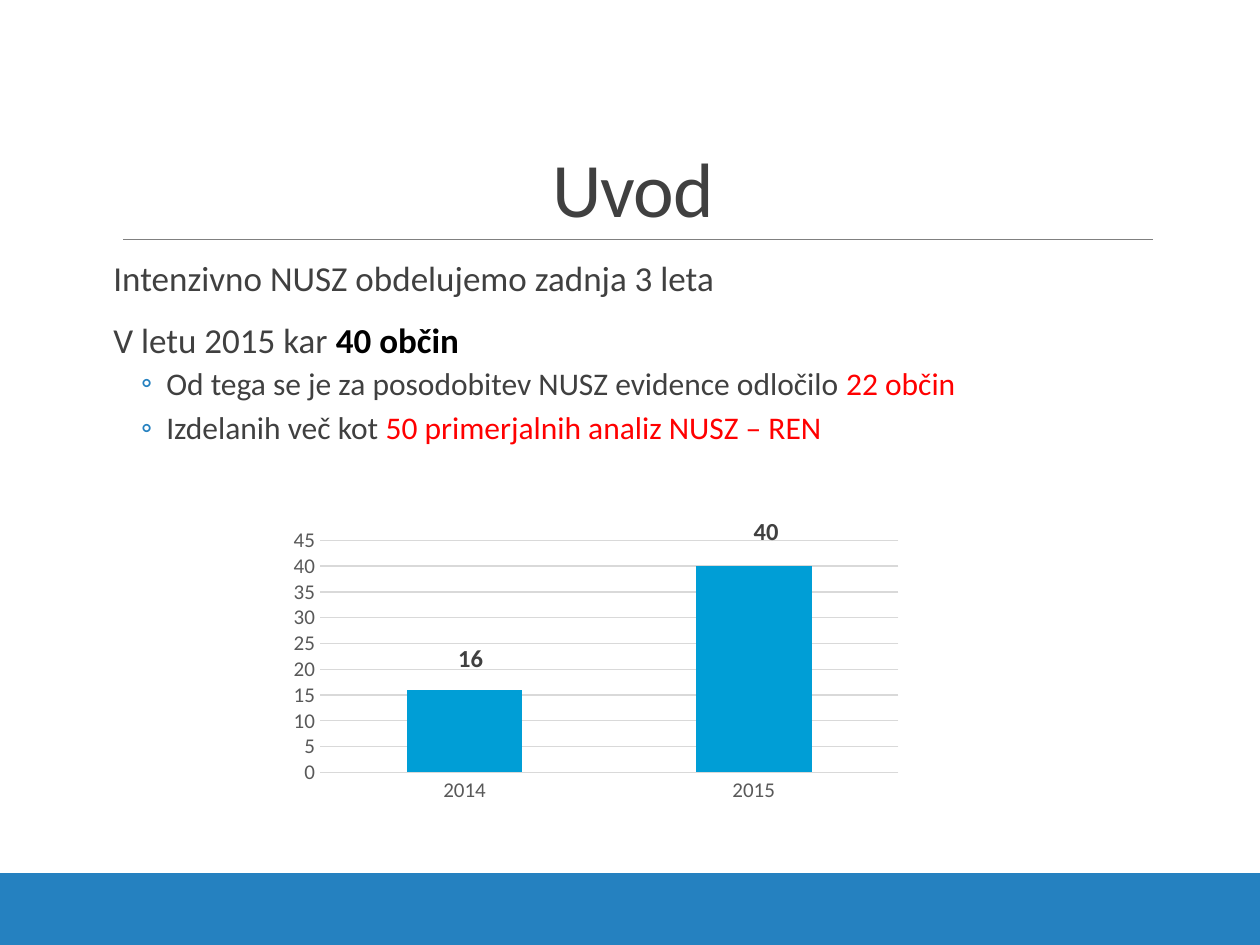
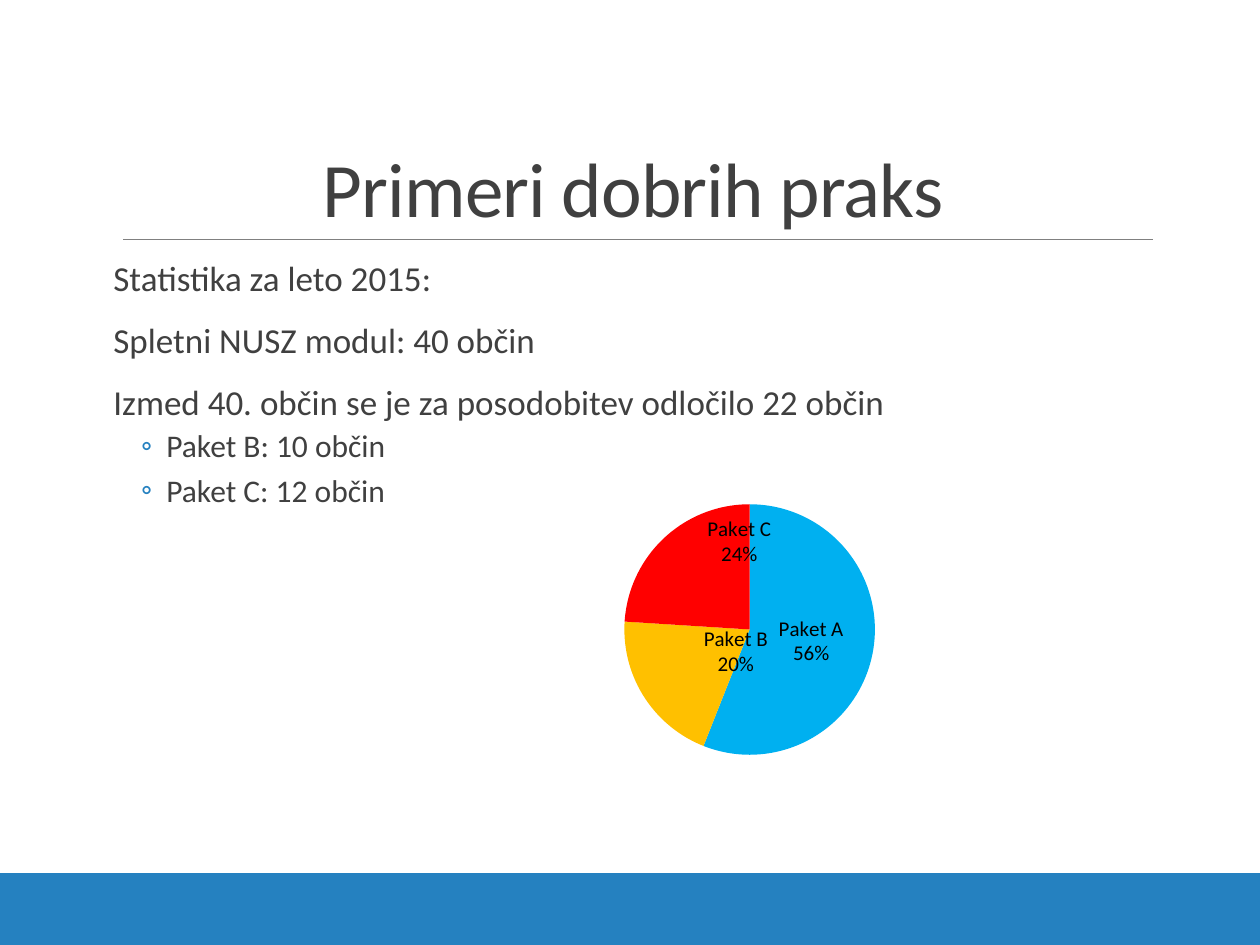
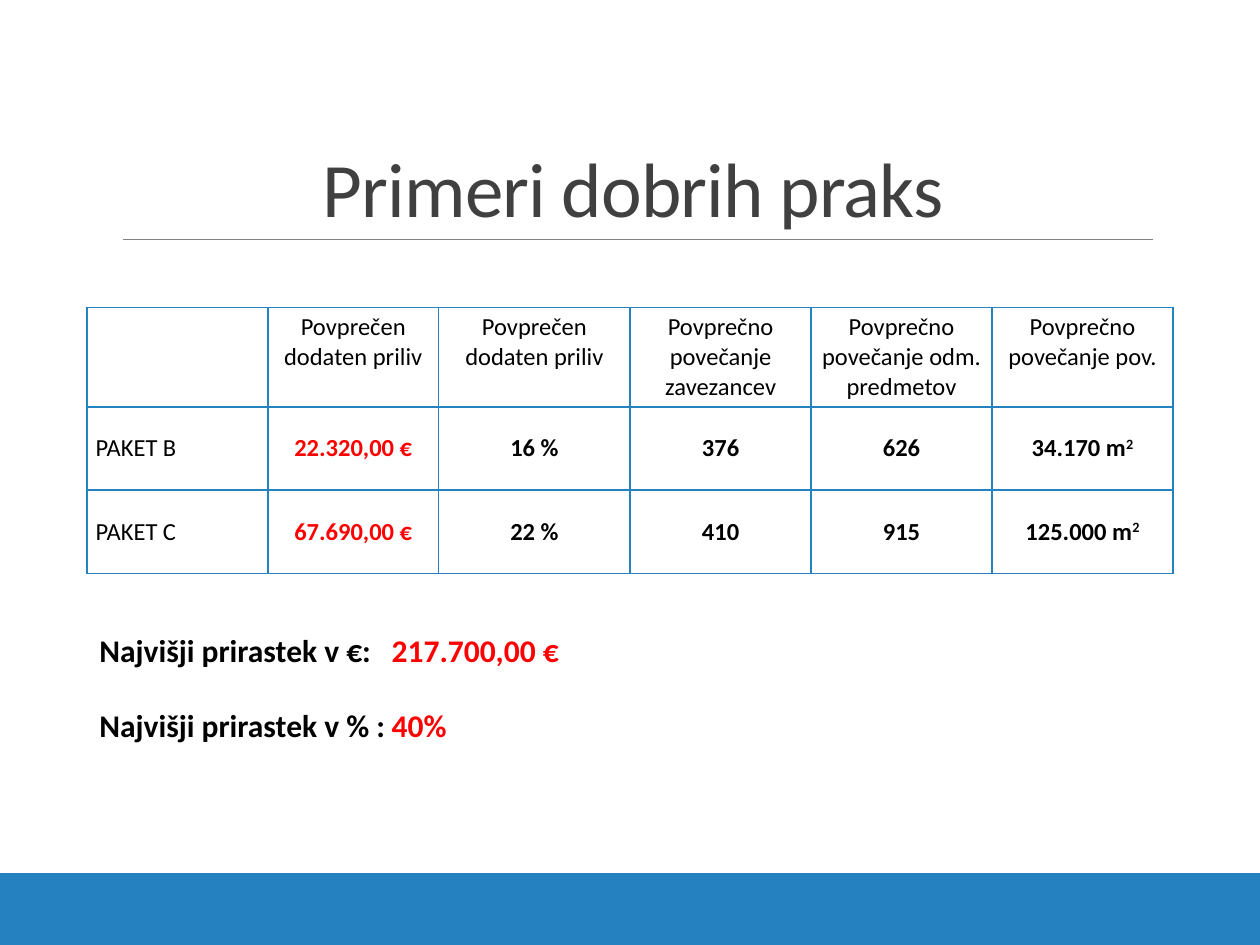
from dataclasses import dataclass
from itertools import product

from lxml.etree import SubElement
from pptx import Presentation
from pptx.chart.data import CategoryChartData
from pptx.dml.color import RGBColor
from pptx.enum.chart import XL_CHART_TYPE, XL_LABEL_POSITION, XL_TICK_MARK
from pptx.enum.shapes import MSO_CONNECTOR, MSO_SHAPE
from pptx.enum.text import MSO_ANCHOR, MSO_AUTO_SIZE, PP_ALIGN
from pptx.oxml import parse_xml
from pptx.oxml.ns import nsdecls, qn
from pptx.util import Inches, Pt


@dataclass(frozen=True)
class Theme:
    font: str = "Calibri"
    band: str = "2581C0"
    rule: str = "808080"
    text: str = "404040"
    strong: str = "000000"
    alert: str = "FF0000"
    axis: str = "595959"
    grid: str = "D9D9D9"
    column: str = "009ED6"
    packages: tuple = ("00B0F0", "FFC000", "FF0000")
    title_size: int = 44
    body_size: int = 20
    sub_size: int = 18
    cell_size: int = 14
    axis_size: int = 12


THEME = Theme()
SLIDE_W, SLIDE_H = Inches(10), Inches(7.5)
COLUMNS, ROWS = 100, 75
COLUMN, ROW = SLIDE_W / COLUMNS, SLIDE_H / ROWS

# Regions as left, top, width, height in grid columns and rows
TITLE_BOX = (9, 3.1, 82.5, 15.9)
BODY_BOX = (9, 20.2, 82.5, 44)
FOOTER_BOX = (0, 69.3, COLUMNS, 5.7)
YEARS_BOX = (22.4, 35.4, 49.9, 28.8)
PACKAGES_BOX = (32.1, 33.6, 51.7, 30.6)
RESULTS_BOX = (6.9, 24.4, 86.2, 21.1)
GAINS_BOX = (6.9, 49.6, 86.2, 10.1)

RED = {"color": THEME.alert}
BOLD = {"color": THEME.strong, "bold": True}
BOLD_RED = {"color": THEME.alert, "bold": True}


def to_emu(box):
    left, top, width, height = box
    return [round(n) for n in (left * COLUMN, top * ROW, width * COLUMN, height * ROW)]


def set_attributes(target, values):
    for name, value in values.items():
        setattr(target, name, value)


def place(placeholder, box):
    set_attributes(placeholder, dict(zip(("left", "top", "width", "height"), to_emu(box))))


def style_font(font, size, color=THEME.text, bold=False):
    set_attributes(font, {"name": THEME.font, "size": Pt(size), "bold": bold})
    font.color.rgb = RGBColor.from_string(color)


def write_runs(paragraph, runs, size, **base):
    """Runs are (text, format) pairs; a format overrides the base."""
    for text, change in runs:
        run = paragraph.add_run()
        run.text = text
        values = {**base, **change}
        baseline = values.pop("baseline", None)
        style_font(run.font, size, **values)
        if baseline:
            run.font._rPr.set("baseline", str(baseline))


def next_paragraph(frame, index):
    return frame.paragraphs[0] if index == 0 else frame.add_paragraph()


# Shared frame: footer band and title rule, kept on the master
def add_frame(slide, master):
    left, top, width, height = to_emu(FOOTER_BOX)
    band = slide.shapes.add_shape(MSO_SHAPE.RECTANGLE, left, top, width, height)
    band.shadow.inherit = False
    band.fill.solid()
    band.fill.fore_color.rgb = RGBColor.from_string(THEME.band)
    band.line.fill.background()

    rule_left, rule_top, rule_right, _ = to_emu((9.8, 19, 91.5, 0))
    rule = slide.shapes.add_connector(
        MSO_CONNECTOR.STRAIGHT, rule_left, rule_top, rule_right, rule_top)
    rule.line.color.rgb = RGBColor.from_string(THEME.rule)
    rule.line.width = Pt(0.5)
    SubElement(rule.element.spPr, qn("a:effectLst"))

    for number, part in enumerate((band, rule), 101):
        part.element.xpath(".//p:cNvPr")[0].set("id", str(number))
        master.shapes.element.append(part.element)


def add_title(slide, text):
    title = slide.shapes.title
    place(title, TITLE_BOX)
    frame = title.text_frame
    set_attributes(frame, {"vertical_anchor": MSO_ANCHOR.BOTTOM,
                           "auto_size": MSO_AUTO_SIZE.NONE, "word_wrap": True})
    heading = frame.paragraphs[0]
    set_attributes(heading, {"alignment": PP_ALIGN.CENTER, "line_spacing": 0.85})
    write_runs(heading, [(text, {})], THEME.title_size)
    heading.runs[0].font._rPr.set("spc", "-50")


def set_bullet(paragraph, is_sub):
    properties = paragraph._p.get_or_add_pPr()
    margin, indent = (0.42, -0.2) if is_sub else (0, 0)
    properties.set("marL", str(Inches(margin)))
    properties.set("indent", str(Inches(indent)))
    if is_sub:
        color = SubElement(properties, qn("a:buClr"))
        SubElement(color, qn("a:srgbClr"), val=THEME.band)
        SubElement(properties, qn("a:buFont"), typeface=THEME.font)
        SubElement(properties, qn("a:buChar"), char="◦")
    else:
        SubElement(properties, qn("a:buNone"))


# Body list: items are (level, runs)
def add_body(slide, items):
    body = slide.placeholders[1]
    place(body, BODY_BOX)
    frame = body.text_frame
    set_attributes(frame, {"margin_left": 0, "margin_right": 0, "word_wrap": True,
                           "auto_size": MSO_AUTO_SIZE.NONE,
                           "vertical_anchor": MSO_ANCHOR.TOP})
    for index, (level, runs) in enumerate(items):
        item = next_paragraph(frame, index)
        set_bullet(item, level == 1)
        before, after = (2, 4) if level else (12, 2)
        set_attributes(item, {"level": level, "line_spacing": 0.9,
                              "space_before": Pt(before if index else 0),
                              "space_after": Pt(after)})
        write_runs(item, runs, THEME.sub_size if level else THEME.body_size)


def layout_xml(**values):
    parts = "".join(f'<c:{name} val="{value}"/>' for name, value in values.items())
    return parse_xml(f'<c:layout {nsdecls("c")}><c:manualLayout>{parts}'
                     "</c:manualLayout></c:layout>")


def add_chart(slide, kind, box, values, plot):
    data = CategoryChartData()
    data.categories = list(values)
    data.add_series("", list(values.values()))
    chart = slide.shapes.add_chart(kind, *to_emu(box), data).chart
    set_attributes(chart, {"has_title": False, "has_legend": False})
    style_font(chart.font, THEME.axis_size, THEME.axis)
    plot_area = chart.element.xpath(".//c:plotArea")[0]
    for automatic in plot_area.findall(qn("c:layout")):
        plot_area.remove(automatic)
    plot_area.insert(0, layout_xml(layoutTarget="inner", xMode="edge", yMode="edge",
                                   **dict(zip("xywh", plot))))
    return chart


def color_points(series, colors):
    for index, color in enumerate(colors):
        fill = series.points[index].format.fill
        fill.solid()
        fill.fore_color.rgb = RGBColor.from_string(color)


def label_points(series, offsets, position, shown, size, color, bold=False):
    """Label each point, moved by shares of the chart's width and height."""
    for index in range(len(offsets)):
        label = series.points[index].data_label
        style_font(label.font, size, color, bold)
        label.position = position
    for mark, (x, y) in zip(series._element.xpath(".//c:dLbl"), offsets):
        if x or y:
            mark.find(qn("c:idx")).addnext(layout_xml(x=x, y=y))
        for name in ("showVal", "showCatName", "showPercent"):
            mark.find(qn(f"c:{name}")).set("val", str(int(name in shown)))
        SubElement(mark, qn("c:separator")).text = "\n"
    for leader in series._element.xpath(".//c:showLeaderLines"):
        leader.set("val", "0")


# Column chart of municipalities per year
def add_years_chart(slide, box):
    chart = add_chart(slide, XL_CHART_TYPE.COLUMN_CLUSTERED, box,
                      {"2014": 16, "2015": 40}, (0.06, 0.26, 0.92, 0.64))
    for axis in (chart.category_axis, chart.value_axis):
        set_attributes(axis, {"major_tick_mark": XL_TICK_MARK.NONE,
                              "minor_tick_mark": XL_TICK_MARK.NONE})
        axis.format.line.fill.background()
        style_font(axis.tick_labels.font, THEME.axis_size, THEME.axis)
    set_attributes(chart.value_axis, {"minimum_scale": 0, "maximum_scale": 45,
                                      "major_unit": 5, "has_major_gridlines": True})
    grid = chart.value_axis.major_gridlines.format.line
    grid.color.rgb = RGBColor.from_string(THEME.grid)
    grid.width = Pt(0.75)

    columns = chart.plots[0]
    set_attributes(columns, {"gap_width": 150, "vary_by_categories": False})
    series = columns.series[0]
    series.format.fill.solid()
    series.format.fill.fore_color.rgb = RGBColor.from_string(THEME.column)
    label_points(series, [(0.01, -0.03), (0.02, -0.04)], XL_LABEL_POSITION.OUTSIDE_END,
                 {"showVal"}, THEME.cell_size, THEME.text, True)


# Pie chart of package shares
def add_packages_chart(slide, box):
    chart = add_chart(slide, XL_CHART_TYPE.PIE, box,
                      {"Paket A": 56, "Paket B": 20, "Paket C": 24},
                      (0.06, 0.21, 0.94, 0.65))
    chart.plots[0].vary_by_categories = True
    series = chart.plots[0].series[0]
    color_points(series, THEME.packages)
    label_points(series, [(0, 0), (0.06, -0.03), (0.05, -0.11)], XL_LABEL_POSITION.CENTER,
                 {"showCatName", "showPercent"}, THEME.axis_size, THEME.strong)


def set_borders(cell):
    properties = cell._tc.get_or_add_tcPr()
    for side in ("lnL", "lnR", "lnT", "lnB"):
        border = SubElement(properties, qn(f"a:{side}"), w=str(Pt(1)))
        fill = SubElement(border, qn("a:solidFill"))
        SubElement(fill, qn("a:srgbClr"), val=THEME.band)


# Results table: average gains per package
def add_results_table(slide, box):
    headings = ["", "Povprečen dodaten priliv", "Povprečen dodaten priliv",
                "Povprečno povečanje zavezancev", "Povprečno povečanje odm. predmetov",
                "Povprečno povečanje pov."]
    packages = [("PAKET B", "22.320,00 €", "16 %", "376", "626", "34.170 m"),
                ("PAKET C", "67.690,00 €", "22 %", "410", "915", "125.000 m")]
    contents = [headings, *packages]
    column_widths = [14.36, 13.56, 15.2, 14.36, 14.36, 14.36]
    row_heights = [7.9, 6.6, 6.6]

    table = slide.shapes.add_table(len(contents), len(headings), *to_emu(box)).table
    set_attributes(table, {"first_row": False, "horz_banding": False})
    for column, width in zip(table.columns, column_widths):
        column.width = round(width * COLUMN)
    for row, height in zip(table.rows, row_heights):
        row.height = round(height * ROW)

    for r, c in product(range(len(contents)), range(len(headings))):
        cell = table.cell(r, c)
        set_borders(cell)
        cell.fill.background()
        set_attributes(cell, {
            "margin_left": Inches(0.07), "margin_right": Inches(0.07),
            "margin_top": Inches(0.04), "margin_bottom": Inches(0.04),
            "vertical_anchor": MSO_ANCHOR.MIDDLE if r else MSO_ANCHOR.TOP})
        paragraph = cell.text_frame.paragraphs[0]
        paragraph.alignment = PP_ALIGN.LEFT if c == 0 else PP_ALIGN.CENTER
        if not contents[r][c]:
            continue
        runs = [(contents[r][c], {})]
        if r and c == len(headings) - 1:
            runs.append(("2", {"baseline": 30000}))
        write_runs(paragraph, runs, THEME.cell_size,
                   color=THEME.alert if r and c == 1 else THEME.strong,
                   bold=bool(r and c))


# Highest gains, with the amounts lined up on a tab stop
def add_gains(slide, box):
    gains = [("Najvišji prirastek v €:", "217.700,00 €"),
             ("Najvišji prirastek v % :", "40%")]
    frame = slide.shapes.add_textbox(*to_emu(box)).text_frame
    frame.word_wrap = True
    for index, (label, amount) in enumerate(gains):
        gain = next_paragraph(frame, index)
        tabs = SubElement(gain._p.get_or_add_pPr(), qn("a:tabLst"))
        SubElement(tabs, qn("a:tab"), pos=str(Inches(2.32)), algn="l")
        gain.space_before = Pt(21 if index else 0)
        write_runs(gain, [(f"{label}\t", BOLD), (amount, BOLD_RED)], THEME.sub_size)


def build_introduction(slide):
    add_title(slide, "Uvod")
    add_body(slide, [
        (0, [("Intenzivno NUSZ obdelujemo zadnja 3 leta", {})]),
        (0, [("V letu 2015 kar ", {}), ("40 občin", BOLD)]),
        (1, [("Od tega se je za posodobitev NUSZ evidence odločilo ", {}),
             ("22 občin", RED)]),
        (1, [("Izdelanih več kot ", {}), ("50 primerjalnih analiz NUSZ – REN", RED)]),
    ])
    add_years_chart(slide, YEARS_BOX)


def build_statistics(slide):
    add_title(slide, "Primeri dobrih praks")
    add_body(slide, [
        (0, [("Statistika za leto 2015:", {})]),
        (0, [("Spletni NUSZ modul: 40 občin", {})]),
        (0, [("Izmed 40. občin se je za posodobitev odločilo 22 občin", {})]),
        (1, [("Paket B: 10 občin", {})]),
        (1, [("Paket C: 12 občin", {})]),
    ])
    add_packages_chart(slide, PACKAGES_BOX)


def build_results(slide):
    add_title(slide, "Primeri dobrih praks")
    add_results_table(slide, RESULTS_BOX)
    add_gains(slide, GAINS_BOX)


def main():
    deck = Presentation()
    set_attributes(deck, {"slide_width": SLIDE_W, "slide_height": SLIDE_H})
    content, title_only = deck.slide_layouts[1], deck.slide_layouts[5]
    pages = [(content, build_introduction), (content, build_statistics),
             (title_only, build_results)]
    for index, (layout, build) in enumerate(pages):
        slide = deck.slides.add_slide(layout)
        if index == 0:
            add_frame(slide, deck.slide_master)
        build(slide)
    deck.save("out.pptx")


if __name__ == "__main__":
    main()
